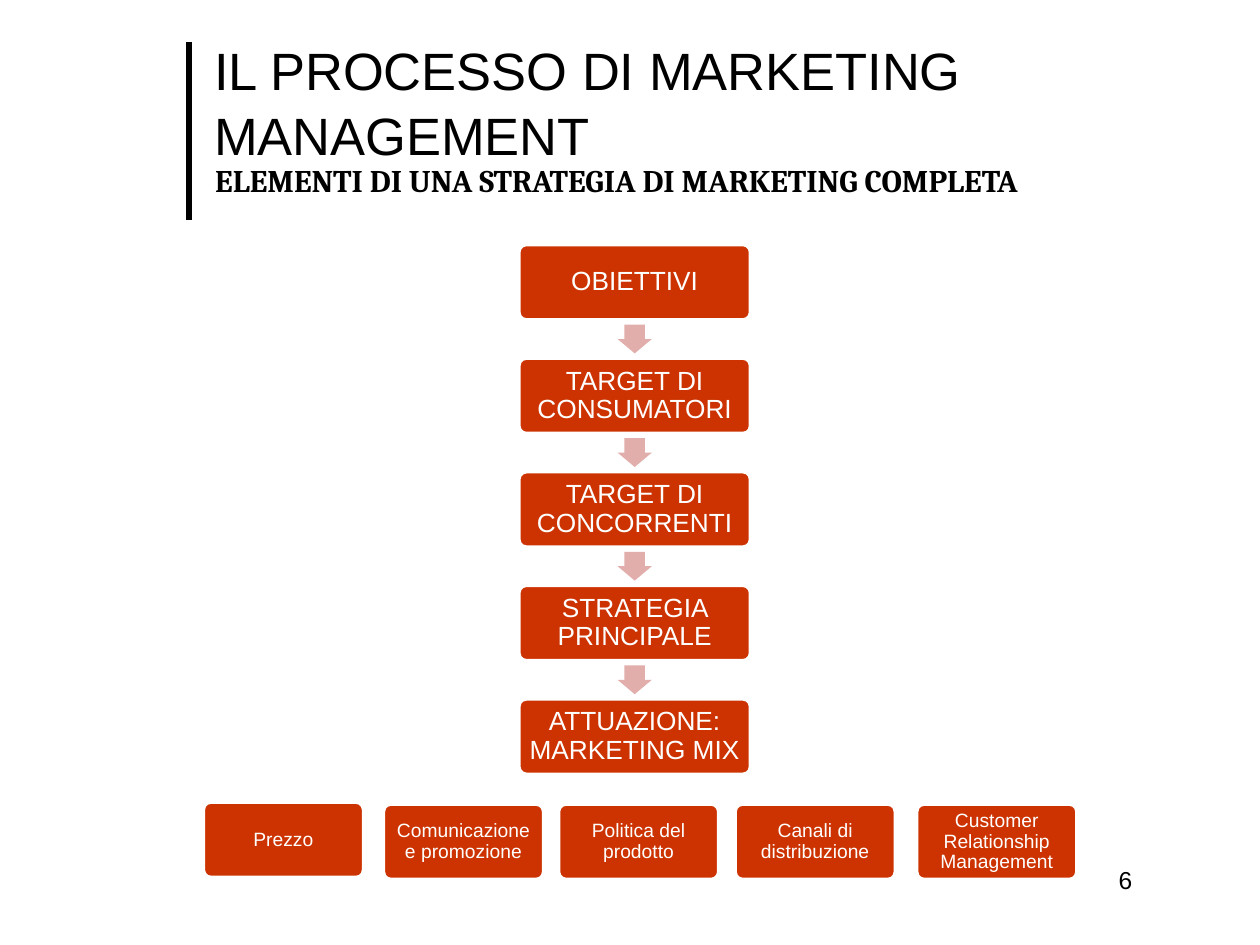
from lxml.etree import SubElement
from pptx import Presentation
from pptx.dml.color import RGBColor
from pptx.enum.shapes import MSO_CONNECTOR, MSO_SHAPE
from pptx.enum.text import MSO_ANCHOR, PP_ALIGN
from pptx.oxml.ns import qn
from pptx.util import Cm, Pt

COLORS = {"text": "000000", "box": "CC3300", "arrow": "E2AEAB", "white": "FFFFFF"}
STAGES = ["OBIETTIVI", "TARGET DI CONSUMATORI", "TARGET DI CONCORRENTI",
          "STRATEGIA PRINCIPALE", "ATTUAZIONE: MARKETING MIX"]
MIX = [(0, 0, "Prezzo"), (3.63, 0.04, "Comunicazione e promozione"),
       (7.16, 0.04, "Politica del prodotto"), (10.72, 0.04, "Canali di distribuzione"),
       (14.38, 0.04, "Customer Relationship Management")]


def rgb(name):
    """Return the named colour."""
    return RGBColor.from_string(COLORS[name])


def write(tf, text, color="text", align=PP_ALIGN.LEFT, spacing=None, **fmt):
    """Fill a text frame with one formatted paragraph."""
    tf.word_wrap = True
    p = tf.paragraphs[0]
    p.alignment, p.line_spacing = align, spacing
    r = p.add_run()
    r.text = text
    for key, value in {"name": "Arial", "bold": False, **fmt}.items():
        setattr(r.font, key, value)
    r.font.color.rgb = rgb(color)


def add_label(slide, x, y, w, h, text, **fmt):
    """Add a text box."""
    sp = slide.shapes.add_textbox(Cm(x), Cm(y), Cm(w), Cm(h))
    write(sp.text_frame, text, **fmt)


def add_shape(slide, kind, x, y, w, h, fill, adjustments):
    """Add a flat filled shape without outline."""
    sp = slide.shapes.add_shape(kind, Cm(x), Cm(y), Cm(w), Cm(h))
    sp.shadow.inherit = False
    sp.fill.solid()
    sp.fill.fore_color.rgb = rgb(fill)
    sp.line.fill.background()
    for i, value in enumerate(adjustments):
        sp.adjustments[i] = value
    return sp


def add_box(slide, x, y, w, h, text, size):
    """Add a rounded box with a centred caption."""
    sp = add_shape(slide, MSO_SHAPE.ROUNDED_RECTANGLE, x, y, w, h, "box", [0.1])
    sp.line.color.rgb = rgb("white")
    sp.line.width = Pt(2)
    tf = sp.text_frame
    tf.vertical_anchor = MSO_ANCHOR.MIDDLE
    for side in ("left", "right", "top", "bottom"):
        setattr(tf, f"margin_{side}", Cm(0.1))
    write(tf, text, "white", PP_ALIGN.CENTER, 0.9, size=Pt(size))


def add_header(slide, x, y, w, h):
    """Place the rule, the title and the subtitle."""
    rule = slide.shapes.add_connector(MSO_CONNECTOR.STRAIGHT, Cm(x), Cm(y + h), Cm(x), Cm(y))
    rule.line.color.rgb = rgb("text")
    rule.line.width = Pt(3)
    SubElement(rule._element.spPr, qn("a:effectLst"))
    title = slide.shapes.title
    box = {"left": x + 0.25, "top": y + 0.07, "width": w, "height": 2.24}
    for key, value in box.items():
        setattr(title, key, Cm(value))
    title.text_frame.vertical_anchor = MSO_ANCHOR.MIDDLE
    write(title.text_frame, "IL PROCESSO DI MARKETING MANAGEMENT", spacing=1.04, size=Pt(30))
    add_label(slide, x + 0.28, y + 2.28, w, 1, "ELEMENTI DI UNA STRATEGIA DI MARKETING COMPLETA",
              align=PP_ALIGN.JUSTIFY, name="Cambria", size=Pt(18), bold=True)


def add_stages(slide, x, y, w, h, pitch):
    """Stack the stages, with an arrow centred in each gap."""
    length, breadth = 0.58, 0.69
    for i, text in enumerate(STAGES):
        top = y + i * pitch
        add_box(slide, x, top, w, h, text, 15)
        if i < len(STAGES) - 1:
            arrow = add_shape(slide, MSO_SHAPE.RIGHT_ARROW, x + (w - length) / 2,
                              top + (h + pitch - breadth) / 2, length, breadth,
                              "arrow", [0.6, 0.5])
            arrow.rotation = 90


def add_mix(slide, x, y, w, h):
    """Place the marketing mix boxes along the bottom."""
    for dx, dy, text in MIX:
        add_box(slide, x + dx, y + dy, w, h, text, 11)


def main():
    """Build and save the slide."""
    prs = Presentation()
    prs.slide_width, prs.slide_height = Cm(25.4), Cm(19.05)
    slide = prs.slides.add_slide(prs.slide_layouts[5])
    add_header(slide, 3.81, 0.84, 22.86, 3.6)
    add_stages(slide, 10.46, 4.93, 4.67, 1.52, 2.29)
    add_mix(slide, 4.1, 16.17, 3.23, 1.52)
    add_label(slide, 22.3, 17.32, 3.1, 1.27, "6", size=Pt(14))
    prs.save("out.pptx")


if __name__ == "__main__":
    main()
